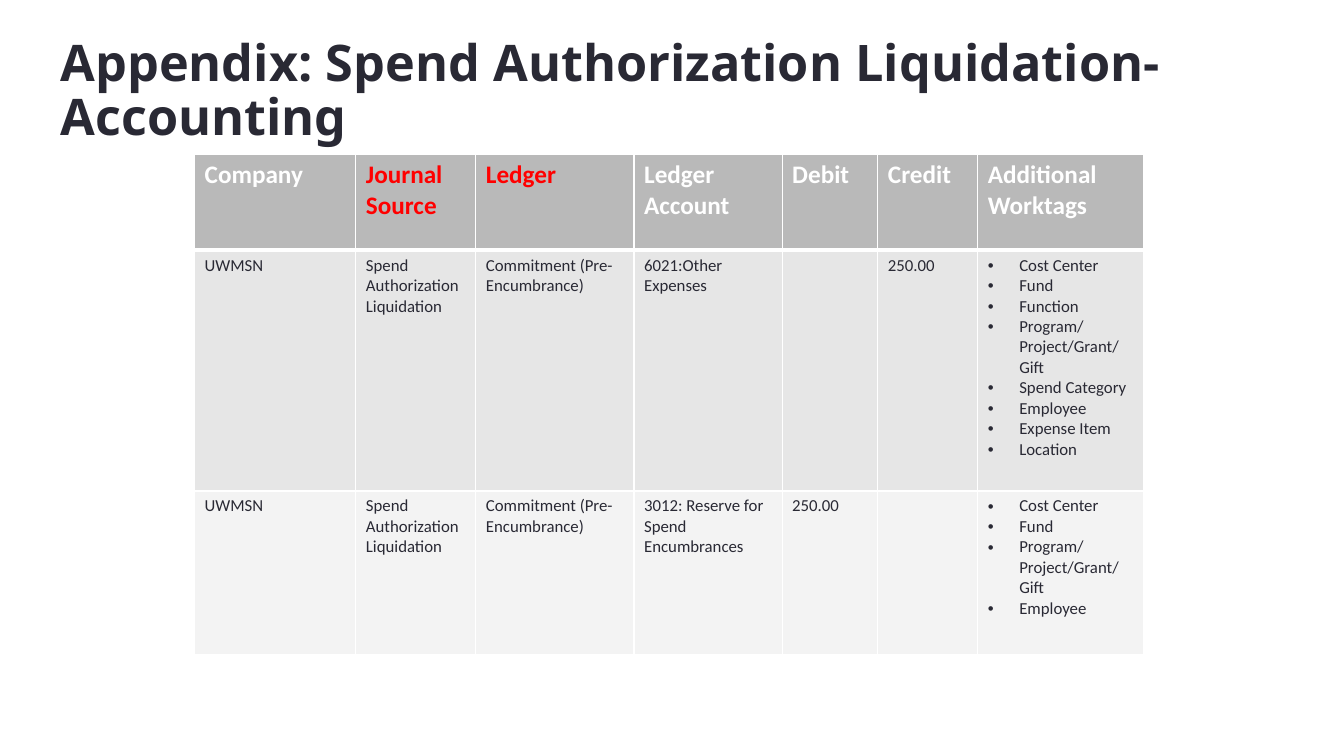
from lxml.etree import SubElement
from pptx import Presentation
from pptx.dml.color import RGBColor
from pptx.enum.text import MSO_ANCHOR, MSO_AUTO_SIZE, PP_ALIGN
from pptx.oxml.ns import qn
from pptx.util import Pt

INK, WHITE, RED = "292934", "FFFFFF", "FF0000"
ROW_FILLS = ["B9B9B9", "E6E6E6", "F3F3F3"]
COLUMN_WIDTHS = [115.2, 85.7, 113, 105.8, 68.4, 71.3, 118.8]
ROW_HEIGHTS = [68.4, 172.1, 116.6]
BULLET_INDENT = Pt(22.5)

SOURCE = "Spend Authorization Liquidation"
LEDGER = "Commitment (Pre-Encumbrance)"
PROGRAM = "Program/Project/Grant/Gift"
JOURNAL = [
    ["Company", "Journal Source", "Ledger", "Ledger Account", "Debit", "Credit",
     "Additional Worktags"],
    ["UWMSN", SOURCE, LEDGER, "6021:Other Expenses", "", "250.00",
     ["Cost Center", "Fund", "Function", PROGRAM, "Spend Category", "Employee",
      "Expense Item", "Location"]],
    ["UWMSN", SOURCE, LEDGER, "3012: Reserve for Spend Encumbrances", "250.00", "",
     ["Cost Center", "Fund", PROGRAM, "Employee"]],
]


def style(font, face, size, color, bold):
    font.name, font.size, font.bold = face, Pt(size), bold
    font.color.rgb = RGBColor.from_string(color)


def add_borders(cell, top, bottom):
    """Give the cell white edges: 1 pt at the sides, the given widths above and below."""
    properties = cell._tc.get_or_add_tcPr()
    for edge, width in [("L", 1), ("R", 1), ("T", top), ("B", bottom)]:
        line = SubElement(properties, qn(f"a:ln{edge}"), w=str(Pt(width)))
        SubElement(SubElement(line, qn("a:solidFill")), qn("a:srgbClr"), val=WHITE)


prs = Presentation()
prs.slide_width, prs.slide_height = Pt(960), Pt(540)
slide = prs.slides.add_slide(prs.slide_layouts[5])

title = slide.shapes.title
title.left, title.top, title.width, title.height = Pt(36), Pt(36), Pt(828), Pt(60)
title.text_frame.auto_size = MSO_AUTO_SIZE.NONE
title.text_frame.word_wrap = True
title.text_frame.vertical_anchor = MSO_ANCHOR.MIDDLE
heading = title.text_frame.paragraphs[0]
heading.alignment = PP_ALIGN.LEFT
heading.line_spacing = 0.9
heading_run = heading.add_run()
heading_run.text = "Appendix: Spend Authorization Liquidation-Accounting"
style(heading_run.font, "Noto Sans", 36, INK, True)

entries = slide.shapes.add_table(
    len(JOURNAL), len(COLUMN_WIDTHS), Pt(139), Pt(110.2),
    Pt(sum(COLUMN_WIDTHS)), Pt(sum(ROW_HEIGHTS))).table
for column, width in zip(entries.columns, COLUMN_WIDTHS):
    column.width = Pt(width)
for row, height in zip(entries.rows, ROW_HEIGHTS):
    row.height = Pt(height)

for r, values in enumerate(JOURNAL):
    is_header = r == 0
    for c, value in enumerate(values):
        cell = entries.cell(r, c)
        add_borders(cell, top=3 if r == 1 else 1, bottom=3 if is_header else 1)
        cell.fill.solid()
        cell.fill.fore_color.rgb = RGBColor.from_string(ROW_FILLS[r])
        color = INK
        if is_header:
            color = RED if value in ("Journal Source", "Ledger") else WHITE

        is_list = isinstance(value, list)
        for i, text in enumerate(value if is_list else [value]):
            frame = cell.text_frame
            paragraph = frame.add_paragraph() if i else frame.paragraphs[0]
            if is_list:
                bullet = paragraph._p.get_or_add_pPr()
                bullet.set("marL", str(BULLET_INDENT))
                bullet.set("indent", str(-BULLET_INDENT))
                SubElement(bullet, qn("a:buFont"), typeface="Arial")
                SubElement(bullet, qn("a:buChar"), char="•")
            if text:
                run = paragraph.add_run()
                run.text = text
                style(run.font, "Calibri", 18 if is_header else 12, color, is_header)

prs.save("out.pptx")
